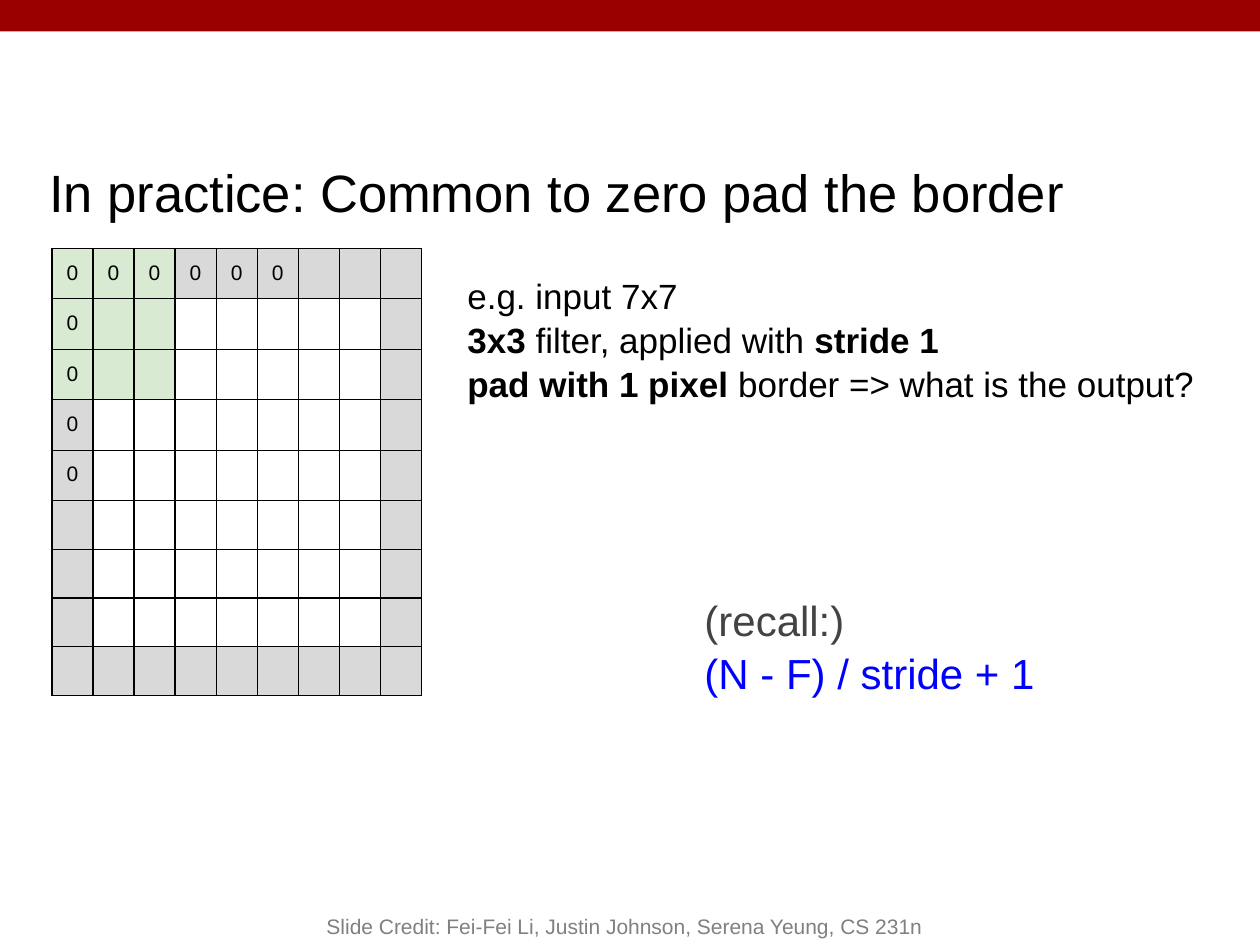
import pptx
import pptx.util
import pptx.dml.color
import pptx.enum.shapes
import pptx.enum.text
import pptx.oxml
import pptx.oxml.ns

Pt = pptx.util.Pt
ALIGN = pptx.enum.text.PP_ALIGN
ANCHOR = pptx.enum.text.MSO_ANCHOR
GREY, GREEN, WHITE, BLACK = "D9D9D9", "D9EAD3", "FFFFFF", "000000"


def rgb(value):
    return pptx.dml.color.RGBColor.from_string(value)


def paint(shape, color):
    shape.fill.solid()
    shape.fill.fore_color.rgb = rgb(color)


def add_run(p, text, size, color=BLACK, bold=False):
    r = p.add_run()
    r.text = text
    for name, value in {"name": "Arial", "size": Pt(size), "bold": bold}.items():
        setattr(r.font, name, value)
    r.font.color.rgb = rgb(color)


def add_band(s, box):
    sp = s.shapes.add_shape(
        pptx.enum.shapes.MSO_SHAPE.RECTANGLE, *[Pt(v) for v in box])
    sp.shadow.inherit = False
    paint(sp, "990000")
    sp.line.fill.background()


def add_text(s, box, lines, size, anchor=ANCHOR.TOP, align=ALIGN.LEFT,
             inset=7.2, spacing=1.0):
    tf = s.shapes.add_textbox(*[Pt(v) for v in box]).text_frame
    settings = {"word_wrap": True, "vertical_anchor": anchor}
    for side in ("left", "right", "top", "bottom"):
        settings["margin_" + side] = Pt(inset)
    for name, value in settings.items():
        setattr(tf, name, value)
    for i, line in enumerate(lines):
        p = tf.add_paragraph() if i else tf.paragraphs[0]
        p.alignment = align
        p.line_spacing = spacing
        for text, color, bold in line:
            add_run(p, text, size, color, bold)


def add_borders(cell, width, color):
    tc_pr = cell._tc.get_or_add_tcPr()
    for i, side in enumerate(("lnL", "lnR", "lnT", "lnB")):
        tc_pr.insert(i, pptx.oxml.parse_xml(
            f'<a:{side} {pptx.oxml.ns.nsdecls("a")} w="{Pt(width)}">'
            f'<a:solidFill><a:srgbClr val="{color}"/></a:solidFill></a:{side}>'))


def cell_color(row, col, n):
    if row < 3 and col < 3:
        return GREEN
    return GREY if row in (0, n - 1) or col in (0, n - 1) else WHITE


def add_padded_grid(s, box, n=9):
    x, y, w, h = box
    table = s.shapes.add_table(n, n, Pt(x), Pt(y), Pt(w), Pt(h)).table
    for i in range(n):
        table.columns[i].width = Pt(w / n)
        table.rows[i].height = Pt(h / n)
    for row in range(n):
        for col in range(n):
            cell = table.cell(row, col)
            has_zero = (row == 0 and col < 6) or (col == 0 and row < 5)
            paint(cell, cell_color(row, col, n))
            add_borders(cell, 0.75, BLACK)
            cell.margin_left = cell.margin_right = Pt(7.2)
            cell.margin_top = cell.margin_bottom = Pt(7.2 if has_zero else 0)
            if has_zero:
                p = cell.text_frame.paragraphs[0]
                p.alignment = ALIGN.CENTER
                add_run(p, "0", 12)


def build_slide(prs):
    s = prs.slides.add_slide(prs.slide_layouts[6])
    add_band(s, (0, 0, 720, 18))
    add_text(s, (21, 84.5, 652, 58),
             [[("In practice: Common to zero pad the border", BLACK, False)]], 30)
    add_padded_grid(s, (29.7, 142, 211, 250.2))
    add_text(s, (260, 148.5, 460, 117), [
        [("e.g. input 7x7", BLACK, False)],
        [("3x3", BLACK, True), (" filter, applied with ", BLACK, False),
         ("stride 1", BLACK, True)],
        [("pad with 1 pixel", BLACK, True),
         (" border => what is the output?", BLACK, False)],
    ], 20, spacing=1.05)
    add_text(s, (395.5, 320.5, 227.5, 96.5), [
        [("(recall:)", "434343", False)],
        [("(N - F) / stride + 1", "0000FF", False)],
    ], 24, ANCHOR.MIDDLE, spacing=1.05)
    add_text(s, (144, 504, 426, 36), [
        [("Slide Credit: Fei-Fei Li, Justin Johnson, Serena Yeung, CS 231n",
          "808080", False)],
    ], 12, ANCHOR.BOTTOM, ALIGN.CENTER, inset=3.6)


def main():
    prs = pptx.Presentation()
    prs.slide_width, prs.slide_height = Pt(720), Pt(540)
    build_slide(prs)
    prs.save("out.pptx")


if __name__ == "__main__":
    main()
